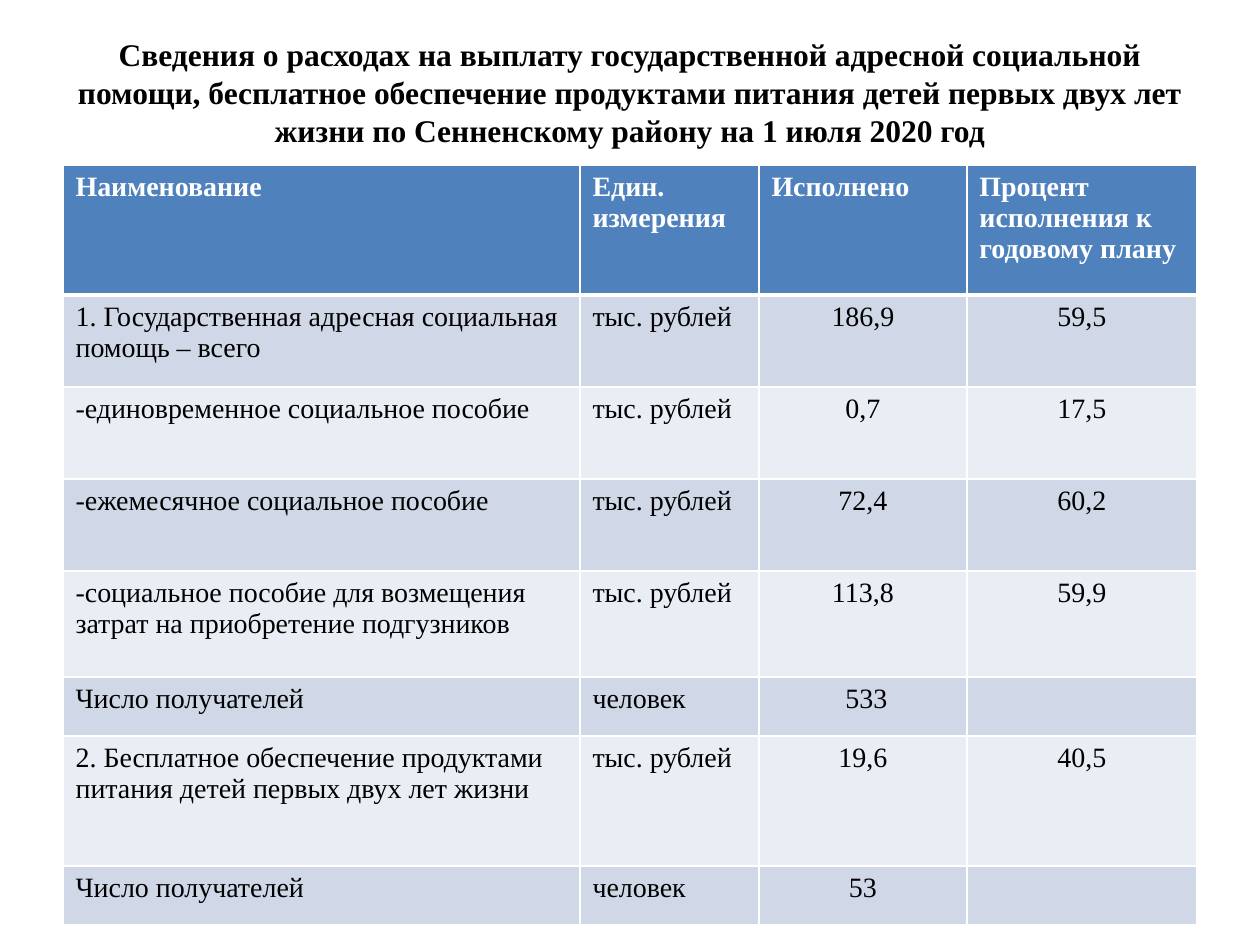
"""Build a slide with a table of social aid spending."""
from dataclasses import dataclass

from lxml import etree
from pptx import Presentation
from pptx.dml.color import RGBColor
from pptx.enum.text import MSO_AUTO_SIZE, MSO_ANCHOR, PP_ALIGN
from pptx.oxml.ns import qn
from pptx.util import Pt

PX = 914400 // 126
FONT = "Times New Roman"
BLACK = RGBColor(0x00, 0x00, 0x00)
WHITE = RGBColor(0xFF, 0xFF, 0xFF)
BLUE = RGBColor(0x4F, 0x81, 0xBD)
DARK = RGBColor(0xD0, 0xD8, 0xE8)
LIGHT = RGBColor(0xE9, 0xED, 0xF4)
LEFT, CENTER = PP_ALIGN.LEFT, PP_ALIGN.CENTER
MIDDLE = MSO_ANCHOR.MIDDLE
NO_FIT = MSO_AUTO_SIZE.NONE
THIN, THICK = Pt(1), Pt(3)

TITLE = (
    "Сведения о расходах на выплату государственной адресной социальной "
    "помощи, бесплатное обеспечение продуктами питания детей первых двух лет "
    "жизни по Сенненскому району на 1 июля 2020 год"
)


@dataclass(frozen=True)
class Row:
    """One table row and its height in px."""

    high: int
    name: str
    unit: str
    done: str
    rate: str = ""


WIDTHS = (517, 179, 208, 230)
MONEY = "тыс. рублей"
ROWS = (
    Row(130, "Наименование", "Един. измерения", "Исполнено",
        "Процент исполнения к годовому плану"),
    Row(92, "1. Государственная адресная социальная помощь – всего",
        MONEY, "186,9", "59,5"),
    Row(92, "-единовременное социальное пособие", MONEY, "0,7", "17,5"),
    Row(92, "-ежемесячное социальное пособие", MONEY, "72,4", "60,2"),
    Row(106, "-социальное пособие для возмещения затрат на приобретение подгузников",
        MONEY, "113,8", "59,9"),
    Row(59, "Число получателей", "человек", " 533"),
    Row(130, "2. Бесплатное обеспечение продуктами питания детей первых двух лет жизни",
        MONEY, "19,6", "40,5"),
    Row(59, "Число получателей", "человек", "53"),
)


def set_font(para, size: int, color: RGBColor, bold: bool) -> None:
    """Style a whole paragraph."""
    font = para.font
    font.name, font.size, font.bold = FONT, Pt(size), bold
    font.color.rgb = color


def add_edges(cell, top: int, base: int) -> None:
    """Give a cell white borders."""
    props = cell._tc.get_or_add_tcPr()
    edges = (("a:lnL", THIN), ("a:lnR", THIN), ("a:lnT", top), ("a:lnB", base))
    for spot, (tag, width) in enumerate(edges):
        line = etree.Element(qn(tag), w=str(int(width)))
        fill = etree.SubElement(line, qn("a:solidFill"))
        etree.SubElement(fill, qn("a:srgbClr"), val=str(WHITE))
        props.insert(spot, line)


def fill_cell(cell, text: str, row: int, col: int) -> None:
    """Write and style one cell."""
    head = row == 0
    cell.text = text
    para = cell.text_frame.paragraphs[0]
    para.alignment = CENTER if not head and col > 1 else LEFT
    set_font(para, 16, WHITE if head else BLACK, head)
    cell.fill.solid()
    cell.fill.fore_color.rgb = BLUE if head else DARK if row % 2 else LIGHT
    add_edges(cell, THICK if row == 1 else THIN, THICK if head else THIN)


def add_title(slide) -> None:
    """Place and style the title."""
    title = slide.shapes.title
    title.left, title.top = 63 * PX, 38 * PX
    title.width, title.height = 1134 * PX, 107 * PX
    frame = title.text_frame
    frame.text = TITLE
    frame.word_wrap = True
    frame.auto_size = NO_FIT
    frame.vertical_anchor = MIDDLE
    frame.margin_top = frame.margin_bottom = 0
    para = frame.paragraphs[0]
    para.alignment = CENTER
    para.line_spacing = Pt(21.7)
    set_font(para, 18, BLACK, True)


def add_grid(slide) -> None:
    """Draw the table."""
    high = sum(row.high for row in ROWS)
    table = slide.shapes.add_table(
        len(ROWS), len(WIDTHS), 63 * PX, 165 * PX, sum(WIDTHS) * PX, high * PX
    ).table
    for col, width in enumerate(WIDTHS):
        table.columns[col].width = width * PX
    for num, row in enumerate(ROWS):
        table.rows[num].height = row.high * PX
        for col, text in enumerate((row.name, row.unit, row.done, row.rate)):
            fill_cell(table.cell(num, col), text, num, col)


def main() -> None:
    """Build and save the slide."""
    deck = Presentation()
    deck.slide_width, deck.slide_height = 1260 * PX, 945 * PX
    slide = deck.slides.add_slide(deck.slide_layouts[5])
    add_title(slide)
    add_grid(slide)
    deck.save("out.pptx")


if __name__ == "__main__":
    main()
